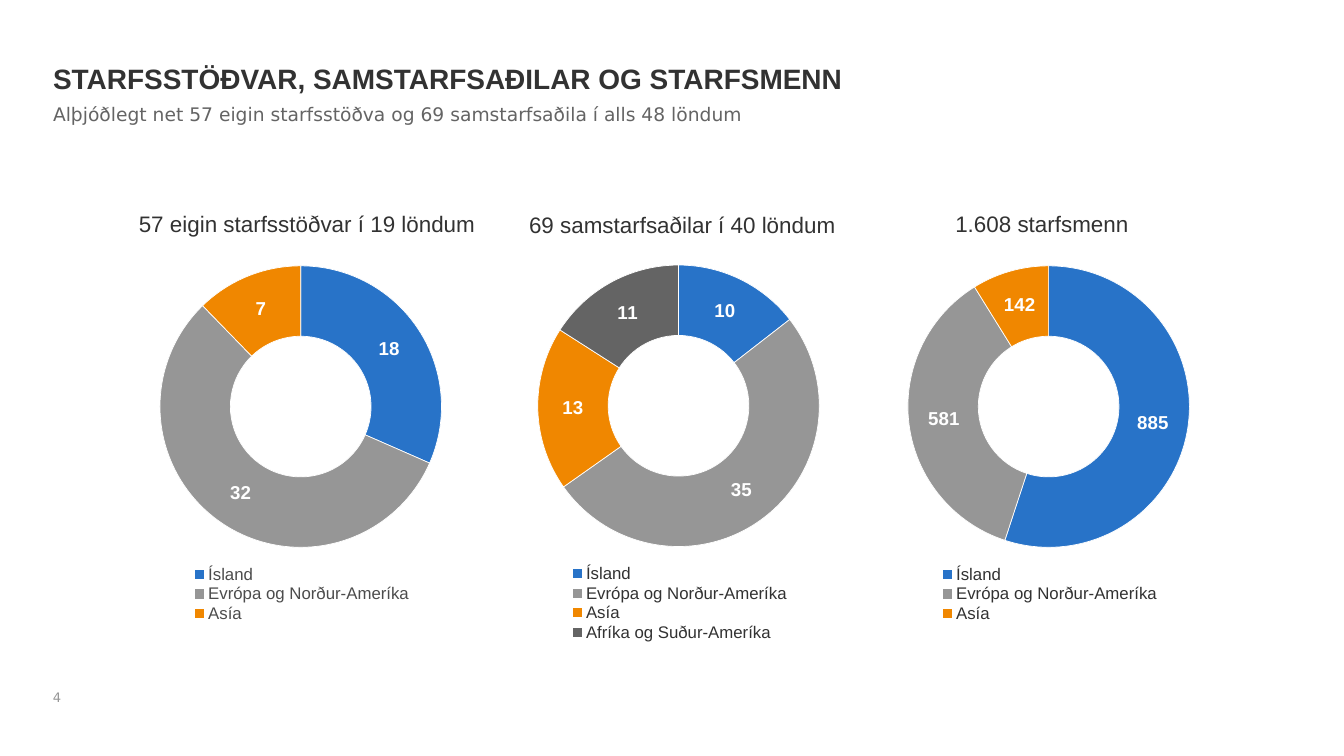
from lxml.etree import SubElement
from pptx import Presentation
from pptx.chart.data import CategoryChartData
from pptx.dml.color import RGBColor
from pptx.enum.chart import XL_CHART_TYPE, XL_LEGEND_POSITION
from pptx.enum.text import MSO_ANCHOR, MSO_AUTO_SIZE, PP_ALIGN
from pptx.oxml.ns import qn
from pptx.util import Cm, Pt


def write_text(shape, text, size, color, font="Arial", bold=False, align=PP_ALIGN.LEFT,
               anchor=MSO_ANCHOR.TOP, line_spacing=1.0):
    frame = shape.text_frame
    frame.word_wrap = True
    frame.auto_size = MSO_AUTO_SIZE.NONE
    frame.vertical_anchor = anchor
    paragraph = frame.paragraphs[0]
    paragraph.alignment = align
    paragraph.line_spacing = line_spacing
    paragraph.space_before = Pt(0)
    if shape.is_placeholder:
        properties = paragraph._p.get_or_add_pPr()
        properties.set("marL", "0")
        properties.set("indent", "0")
        SubElement(properties, qn("a:buNone"))
    run = paragraph.add_run()
    run.text = text
    run.font.name = font
    run.font.size = Pt(size)
    run.font.bold = bold
    run.font.color.rgb = RGBColor.from_string(color)


def set_layout(parent, index, target, x, y, width, height):
    for old_layout in parent.findall(qn("c:layout")):
        parent.remove(old_layout)
    layout = SubElement(parent, qn("c:layout"))
    parent.insert(index, layout)
    manual = SubElement(layout, qn("c:manualLayout"))
    values = {"xMode": "edge", "yMode": "edge", "x": x, "y": y, "w": width, "h": height}
    if target:
        values = {"layoutTarget": target, **values}
    for name, value in values.items():
        SubElement(manual, qn(f"c:{name}")).set("val", str(value))


presentation = Presentation()
presentation.slide_width = Cm(50.8)
presentation.slide_height = Cm(28.58)
slide = presentation.slides.add_slide(presentation.slide_layouts[1])

title, subtitle = slide.placeholders
title.left, title.top, title.width, title.height = Cm(1.75), Cm(2.31), Cm(47.24), Cm(1.47)
write_text(title, "STARFSSTÖÐVAR, SAMSTARFSAÐILAR OG STARFSMENN", 30, "323232", bold=True,
           anchor=MSO_ANCHOR.MIDDLE, line_spacing=0.9)
subtitle.left, subtitle.top, subtitle.width, subtitle.height = Cm(1.75), Cm(3.84), Cm(47.24), Cm(1.8)
write_text(subtitle, "Alþjóðlegt net 57 eigin starfsstöðva og 69 samstarfsaðila í alls 48 löndum",
           20, "646464", font="DejaVu Sans", line_spacing=0.9)

page_number = slide.shapes.add_textbox(Cm(1.75), Cm(25.93), Cm(2.59), Cm(0.86))
write_text(page_number, "4", 14, "969696", font="DejaVu Sans", anchor=MSO_ANCHOR.MIDDLE)

regions = ["Ísland", "Evrópa og Norður-Ameríka", "Asía", "Afríka og Suður-Ameríka"]
region_colors = ["2873C8", "969696", "F08700", "646464"]
doughnuts = [
    ("57 eigin starfsstöðvar í 19 löndum", [18, 32, 7], 3.73, 7.85, "4C4C4C", 4.78, 7.82, 13.64),
    ("69 samstarfsaðilar í 40 löndum", [10, 35, 13, 11], 18.01, 7.82, "323232", 19.56, 7.85, 12.45),
    ("1.608 starfsmenn", [885, 581, 142], 32, 7.85, "323232", 33.55, 7.82, 11.66),
]

for heading, values, left, top, legend_color, heading_left, heading_top, heading_width in doughnuts:
    chart_data = CategoryChartData(number_format="0")
    chart_data.categories = regions[:len(values)]
    chart_data.add_series("Series 1", values)
    chart = slide.shapes.add_chart(XL_CHART_TYPE.DOUGHNUT, Cm(left), Cm(top), Cm(14.76),
                                   Cm(16.46), chart_data).chart
    chart.has_title = False
    chart.font.name = "Arial"
    chart.font.size = Pt(18)
    chart.font.color.rgb = RGBColor.from_string("4C4C4C")

    chart.has_legend = True
    legend = chart.legend
    legend.position = XL_LEGEND_POSITION.BOTTOM
    legend.include_in_layout = False
    legend.font.name = "Arial"
    legend.font.size = Pt(18)
    legend.font.color.rgb = RGBColor.from_string(legend_color)
    set_layout(legend._element, 1, None, 0.22, 0.82, 0.6, round(0.045 * len(values), 3))
    plot_area = chart._chartSpace.chart.plotArea
    set_layout(plot_area, 0, "inner", 0.157, 0.107, 0.721, 0.7)

    plot = chart.plots[0]
    plot.vary_by_categories = True
    for index, color in enumerate(region_colors[:len(values)]):
        point = plot.series[0].points[index]
        point.format.fill.solid()
        point.format.fill.fore_color.rgb = RGBColor.from_string(color)
        point.format.line.color.rgb = RGBColor.from_string("FFFFFF")
        point.format.line.width = Pt(0.75)

    labels = plot.series[0].data_labels
    labels.show_value = True
    labels.show_percentage = False
    labels.number_format = "0"
    labels.number_format_is_linked = False
    labels.font.name = "Arial"
    labels.font.size = Pt(20)
    labels.font.bold = True
    labels.font.color.rgb = RGBColor.from_string("FFFFFF")

    caption = slide.shapes.add_textbox(Cm(heading_left), Cm(heading_top), Cm(heading_width), Cm(1.27))
    write_text(caption, heading, 24, "323232", align=PP_ALIGN.CENTER)

presentation.save("out.pptx")
